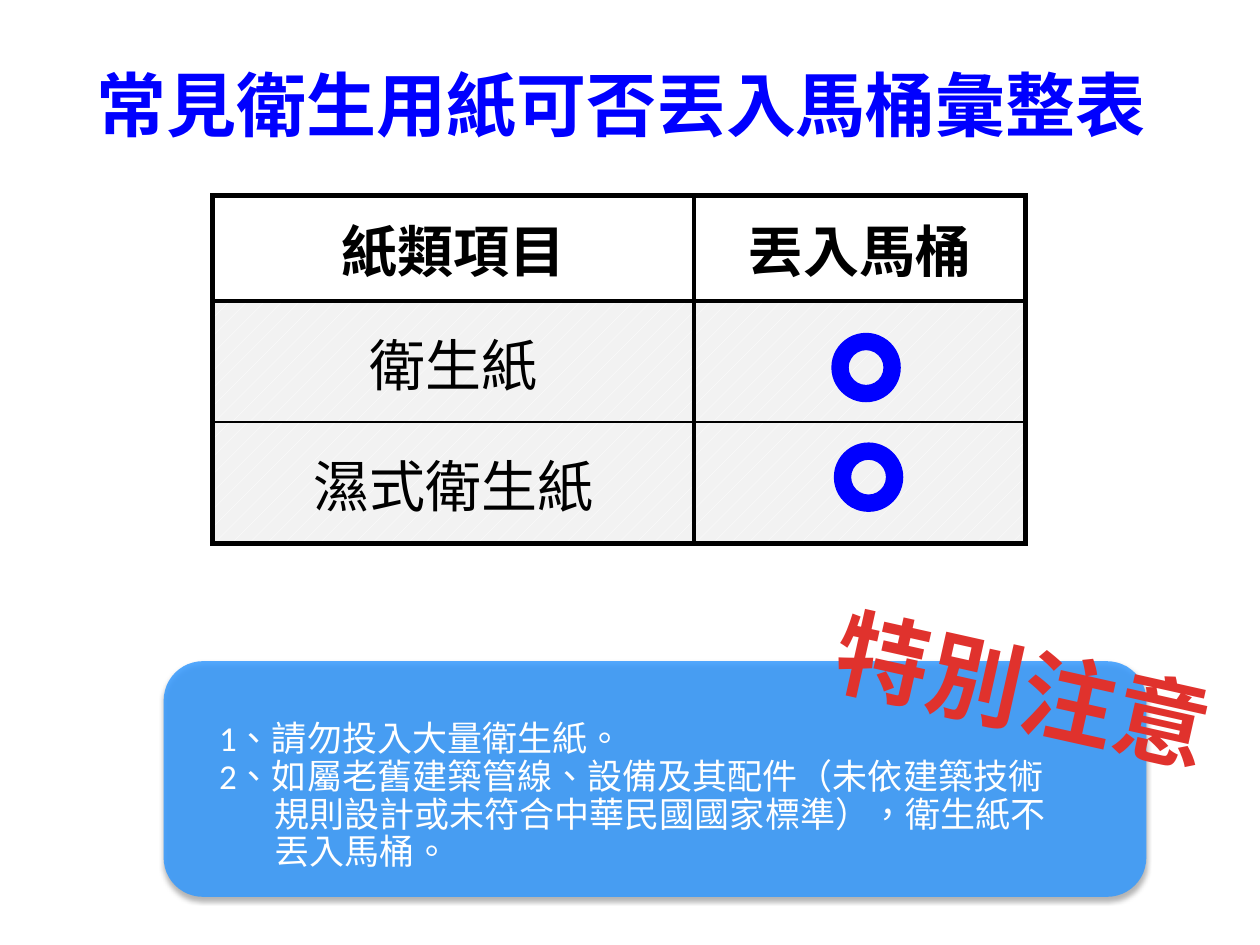
import lxml.etree
import pptx
import pptx.dml.color
import pptx.enum.dml
import pptx.enum.shapes
import pptx.enum.text
import pptx.oxml
import pptx.oxml.ns
import pptx.util

Cm, Pt = pptx.util.Cm, pptx.util.Pt
Rgb = pptx.dml.color.RGBColor
Align = pptx.enum.text.PP_ALIGN
Anchor = pptx.enum.text.MSO_ANCHOR
Shape = pptx.enum.shapes.MSO_SHAPE
qn = pptx.oxml.ns.qn


class Theme:
    blue = Rgb.from_string("0000FF")
    panel = Rgb.from_string("3399FF")
    red = Rgb.from_string("E0322D")
    black = Rgb.from_string("000000")
    white = Rgb.from_string("FFFFFF")
    grey = Rgb.from_string("F2F2F2")
    cjk = "Noto Sans CJK SC"
    title, table, note, stamp = Pt(40), Pt(32), Pt(20), Pt(54)


def write(para, text, size, color, font=Theme.cjk, bold=False,
          align=Align.LEFT, line_spacing=None, indent=0, tracking=0):
    para.alignment = align
    para.line_spacing = line_spacing
    if indent:
        properties = para._p.get_or_add_pPr()
        properties.set("marL", str(int(indent)))
        properties.set("indent", "0")
    span = para.add_run()
    span.text = text
    span.font.size, span.font.bold, span.font.name = size, bold, font
    span.font.color.rgb = color
    run_properties = span._r.get_or_add_rPr()
    run_properties.set("lang", "zh-TW")
    if tracking:
        run_properties.set("spc", str(tracking))
    east_asian = lxml.etree.Element(qn("a:ea"), typeface=Theme.cjk)
    run_properties.find(qn("a:latin")).addnext(east_asian)


def set_borders(cell, **widths):
    """Draw black cell sides; keywords are L, R, T, B with widths in points."""
    properties = cell._tc.get_or_add_tcPr()
    for position, (side, width) in enumerate(widths.items()):
        properties.insert(position, pptx.oxml.parse_xml(
            f'<a:ln{side} {pptx.oxml.ns.nsdecls("a")} w="{int(Pt(width))}">'
            f'<a:solidFill><a:srgbClr val="{Theme.black}"/></a:solidFill></a:ln{side}>'))


deck = pptx.Presentation()
deck.slide_width, deck.slide_height = Cm(25.4), Cm(19.05)
page = deck.slides.add_slide(deck.slide_layouts[6])

# Title
title = page.shapes.add_textbox(Cm(1.7), Cm(1.12), Cm(21.9), Cm(1.96))
title.text_frame.word_wrap = False
write(title.text_frame.paragraphs[0], "常見衛生用紙可否丟入馬桶彙整表",
      size=Theme.title, color=Theme.blue, bold=True)

# Table of paper types
rows = [("紙類項目", "丟入馬桶"), ("衛生紙", ""), ("濕式衛生紙", "")]
table = page.shapes.add_table(3, 2, Cm(4.29), Cm(3.94), Cm(16.4), Cm(7.01)).table
table.first_row = table.horz_banding = False
for column, width in zip(table.columns, (9.7, 6.68)):
    column.width = Cm(width)
for row, height in zip(table.rows, (2.13, 2.44, 2.44)):
    row.height = Cm(height)
for row_number, texts in enumerate(rows):
    header = row_number == 0
    for column_number, text in enumerate(texts):
        cell = table.cell(row_number, column_number)
        cell.vertical_anchor = Anchor.MIDDLE
        cell.margin_left = cell.margin_right = Cm(0.03)
        cell.margin_top = cell.margin_bottom = 0
        if header:
            cell.fill.background()
        else:
            cell.fill.patterned()
            cell.fill.pattern = pptx.enum.dml.MSO_PATTERN.PERCENT_5
            cell.fill.fore_color.rgb = Theme.white
            cell.fill.back_color.rgb = Theme.grey
        set_borders(cell, L=3, R=3, T=1 if row_number == 2 else 3,
                    B=1 if row_number == 1 else 3)
        if text:
            write(cell.text_frame.paragraphs[0], text, size=Theme.table,
                  color=Theme.black, font="Times New Roman", bold=header,
                  align=Align.CENTER)

# Notes panel
panel = page.shapes.add_shape(Shape.ROUNDED_RECTANGLE,
                              Cm(3.3), Cm(13.33), Cm(19.81), Cm(4.75))
panel.fill.solid()
panel.fill.fore_color.rgb = Theme.panel
panel.line.fill.background()
panel.shadow.inherit = False
panel_color = panel._element.spPr.find(".//" + qn("a:srgbClr"))
lxml.etree.SubElement(panel_color, qn("a:alpha"), val="84000")
effects = panel._element.spPr.find(qn("a:effectLst"))
shadow = lxml.etree.SubElement(effects, qn("a:outerShdw"), blurRad=str(int(Pt(3.1))),
                               dist=str(int(Pt(1.8))), dir="5400000", rotWithShape="0")
shadow_color = lxml.etree.SubElement(shadow, qn("a:srgbClr"), val=str(Theme.black))
lxml.etree.SubElement(shadow_color, qn("a:alpha"), val="35000")

notes = page.shapes.add_textbox(Cm(4.09), Cm(13.92), Cm(17.86), Cm(4.29))
frame = notes.text_frame
frame.word_wrap = True
frame.vertical_anchor = Anchor.MIDDLE
frame.margin_left = frame.margin_right = Cm(0.33)
frame.margin_top = frame.margin_bottom = Cm(0.33)
note_lines = [
    ("1、請勿投入大量衛生紙。", 0),
    ("2、如屬老舊建築管線、設備及其配件（未依建築技術", 0),
    ("規則設計或未符合中華民國國家標準），衛生紙不", Cm(1.11)),
    ("丟入馬桶。", Cm(1.11)),
]
for number, (text, indent) in enumerate(note_lines):
    para = frame.add_paragraph() if number else frame.paragraphs[0]
    write(para, text, size=Theme.note, color=Theme.white, font="Calibri",
          line_spacing=0.9, indent=indent)

# Tilted warning
warning = page.shapes.add_textbox(Cm(16.48), Cm(12.6), Cm(8.28), Cm(2.57))
warning.rotation = 12.6
warning.text_frame.word_wrap = False
write(warning.text_frame.paragraphs[0], "特別注意", size=Theme.stamp,
      color=Theme.red, bold=True, align=Align.CENTER, tracking=50)

# Allowed marks
for left, top in ((16.76, 6.71), (16.81, 8.92)):
    mark = page.shapes.add_shape(Shape.DONUT, Cm(left), Cm(top), Cm(1.4), Cm(1.4))
    mark.fill.solid()
    mark.fill.fore_color.rgb = Theme.blue
    mark.line.fill.background()
    mark.shadow.inherit = False

deck.save("out.pptx")
